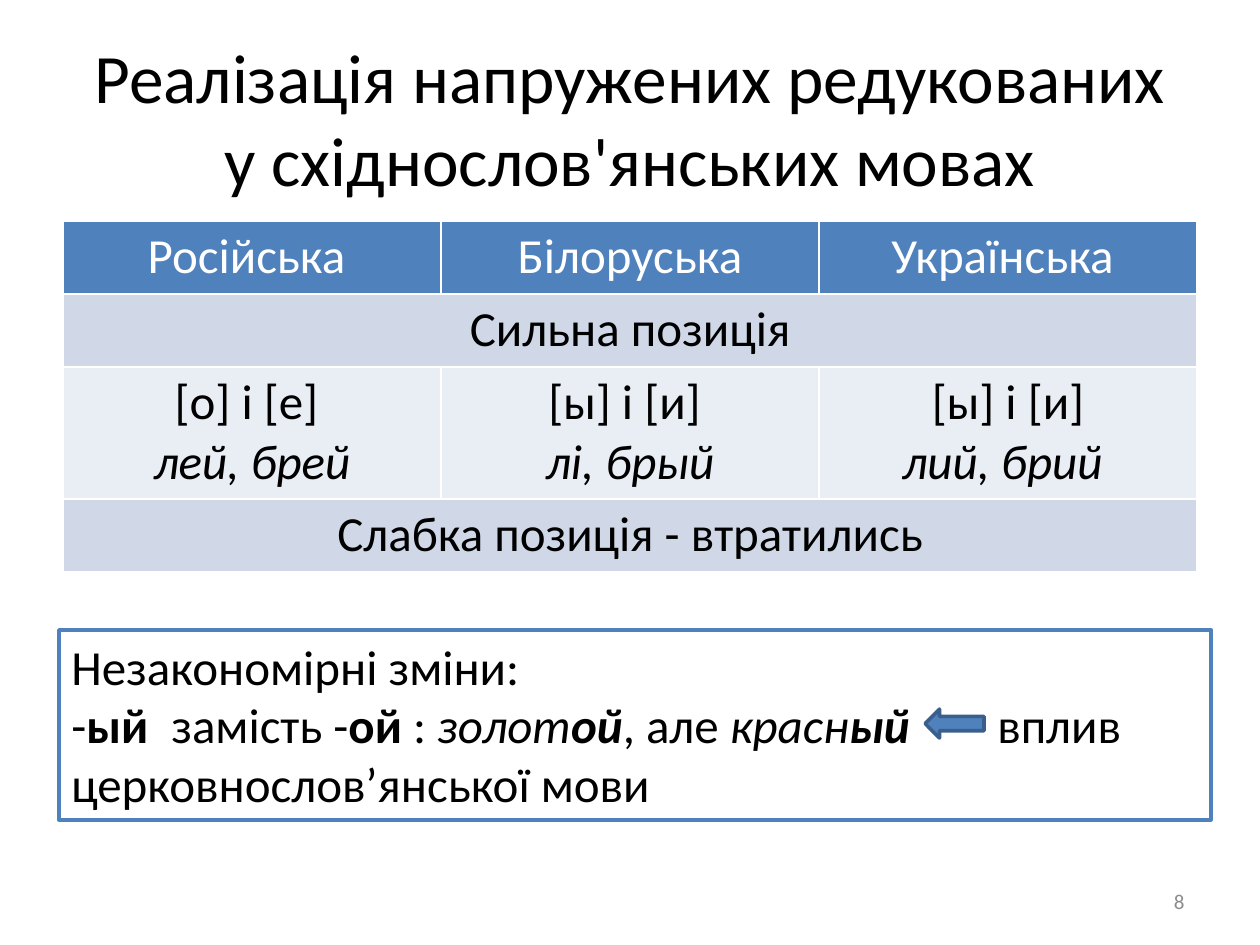
"""Build a slide on tense reduced vowels in the East Slavic languages."""
from dataclasses import dataclass

import pptx
import pptx.dml.color
import pptx.enum.shapes
import pptx.enum.text
import pptx.oxml
import pptx.oxml.ns
import pptx.util

PX_PER_INCH = 126
ALIGN = pptx.enum.text.PP_ALIGN
ANCHOR = pptx.enum.text.MSO_ANCHOR
SHAPE = pptx.enum.shapes.MSO_SHAPE


@dataclass(frozen=True)
class Theme:
    font: str = "Calibri"
    title_size: float = 39.6
    body_size: float = 28
    number_size: float = 12
    line_width: float = 2
    text: str = "000000"
    white: str = "FFFFFF"
    accent: str = "4F81BD"
    arrow_line: str = "3A5F8C"
    band_dark: str = "D0D8E8"
    band_light: str = "E9EDF4"
    muted: str = "8C8C8C"


@dataclass(frozen=True)
class Area:
    left: int
    top: int
    width: int
    height: int


@dataclass(frozen=True)
class Span:
    text: str
    bold: bool = False
    italic: bool = False


@dataclass(frozen=True)
class Row:
    cells: tuple[tuple[Span, ...], ...]
    fill: str
    color: str
    height: int = 73


THEME = Theme()
TITLE = Area(63, 38, 1134, 158)
TABLE = Area(63, 221, 1134, 351)
NOTE = Area(59, 630, 1152, 190)
ARROW = Area(925, 709, 59, 29)
NUMBER = Area(903, 876, 294, 50)
COLUMNS = 3
NOTE_TABS = (100, 926)

ROWS = (
    Row(((Span("Російська "),), (Span("Білоруська"),), (Span("Українська "),)),
        THEME.accent, THEME.white),
    Row(((Span("Сильна позиція"),),), THEME.band_dark, THEME.text),
    Row((
        (Span("[о] і [е] "), Span("лей, брей", italic=True)),
        (Span("[ы] і [и] "), Span("лi, брый", italic=True)),
        (Span("[ы] і [и]"), Span("лий, брий ", italic=True)),
    ), THEME.band_light, THEME.text, 132),
    Row(((Span("Слабка позиція - втратились"),),), THEME.band_dark, THEME.text),
)

NOTE_LINES = (
    (Span("Незакономірні зміни:"),),
    (
        Span("-"), Span("ый\t", bold=True),
        Span("замість -"), Span("ой", bold=True), Span(" : "),
        Span("золот", italic=True), Span("ой", bold=True, italic=True),
        Span(", але "),
        Span("красн", italic=True), Span("ый\t", bold=True, italic=True),
        Span("вплив церковнослов’янської мови"),
    ),
)


def px(length: int) -> pptx.util.Emu:
    """Turn px into EMU."""
    return pptx.util.Emu(round(length * 914400 / PX_PER_INCH))


def place(area: Area) -> tuple[pptx.util.Emu, ...]:
    """Give left, top, width and height in EMU."""
    return px(area.left), px(area.top), px(area.width), px(area.height)


def rgb(value: str) -> pptx.dml.color.RGBColor:
    """Turn a hex value into a colour."""
    return pptx.dml.color.RGBColor.from_string(value)


def write(frame, lines: tuple[tuple[Span, ...], ...], size: float, color: str, align: ALIGN) -> None:
    """Write each line as one paragraph of the frame."""
    frame.word_wrap = True
    for index, line in enumerate(lines):
        para = frame.add_paragraph() if index else frame.paragraphs[0]
        para.alignment = align
        para.font.name = THEME.font
        para.font.size = pptx.util.Pt(size)
        para.font.color.rgb = rgb(color)
        for span in line:
            run = para.add_run()
            run.text = span.text
            run.font.bold = span.bold
            run.font.italic = span.italic


def add_text(page, area: Area, text: str, size: float, color: str, align: ALIGN) -> None:
    """Add a one-paragraph text box, centred vertically."""
    frame = page.shapes.add_textbox(*place(area)).text_frame
    frame.vertical_anchor = ANCHOR.MIDDLE
    write(frame, ((Span(text),),), size, color, align)


def add_shape(page, kind: SHAPE, area: Area, fill: str, line: str):
    """Add a filled and outlined preset shape."""
    shape = page.shapes.add_shape(kind, *place(area))
    shape.shadow.inherit = False
    shape.fill.solid()
    shape.fill.fore_color.rgb = rgb(fill)
    shape.line.color.rgb = rgb(line)
    shape.line.width = pptx.util.Pt(THEME.line_width)
    return shape


def add_table(page) -> None:
    """Add the table of languages, merging rows that hold one cell."""
    table = page.shapes.add_table(len(ROWS), COLUMNS, *place(TABLE)).table
    table.horz_banding = False
    for column in table.columns:
        column.width = px(TABLE.width // COLUMNS)
    for index, row in enumerate(ROWS):
        table.rows[index].height = px(row.height)
        for position in range(COLUMNS):
            cell = table.cell(index, position)
            cell.fill.solid()
            cell.fill.fore_color.rgb = rgb(row.fill)
        if len(row.cells) == 1:
            table.cell(index, 0).merge(table.cell(index, COLUMNS - 1))
        for position, spans in enumerate(row.cells):
            write(table.cell(index, position).text_frame, tuple((span,) for span in spans),
                  THEME.body_size, row.color, ALIGN.CENTER)


def set_tabs(para, stops: tuple[int, ...]) -> None:
    """Give a paragraph left tab stops."""
    properties = para._p.get_or_add_pPr()
    tabs = pptx.oxml.parse_xml(f"<a:tabLst {pptx.oxml.ns.nsdecls('a')}/>")
    for stop in stops:
        tabs.append(pptx.oxml.parse_xml(
            f'<a:tab {pptx.oxml.ns.nsdecls("a")} pos="{px(stop)}" algn="l"/>'))
    properties.insert(0, tabs)


def add_note(page) -> None:
    """Add the framed note and its arrow."""
    frame = add_shape(page, SHAPE.RECTANGLE, NOTE, THEME.white, THEME.accent).text_frame
    frame.vertical_anchor = ANCHOR.TOP
    frame.auto_size = pptx.enum.text.MSO_AUTO_SIZE.SHAPE_TO_FIT_TEXT
    write(frame, NOTE_LINES, THEME.body_size, THEME.text, ALIGN.LEFT)
    set_tabs(frame.paragraphs[1], NOTE_TABS)
    add_shape(page, SHAPE.LEFT_ARROW, ARROW, THEME.accent, THEME.arrow_line)


def main() -> None:
    """Build and save the deck."""
    deck = pptx.Presentation()
    deck.slide_width = pptx.util.Inches(10)
    deck.slide_height = pptx.util.Inches(7.5)
    page = deck.slides.add_slide(deck.slide_layouts[6])
    add_text(page, TITLE, "Реалізація напружених редукованих у східнослов'янських мовах",
             THEME.title_size, THEME.text, ALIGN.CENTER)
    add_table(page)
    add_note(page)
    add_text(page, NUMBER, "8", THEME.number_size, THEME.muted, ALIGN.RIGHT)
    deck.save("out.pptx")


if __name__ == "__main__":
    main()
